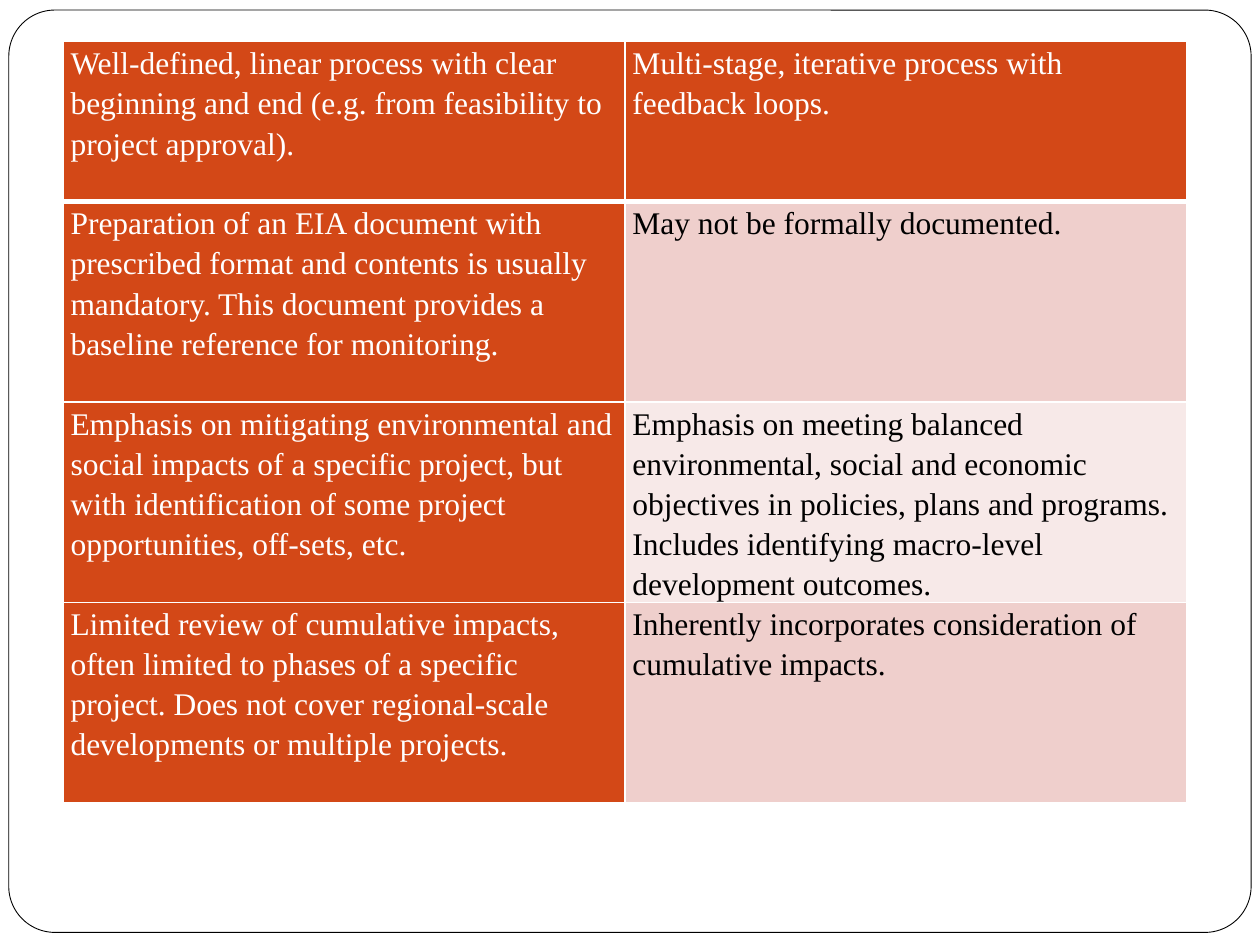
import pptx
import pptx.dml.color
import pptx.enum.shapes
import pptx.oxml
import pptx.oxml.ns
import pptx.util
from pptx.util import Inches

RGBColor = pptx.dml.color.RGBColor
WHITE = RGBColor(0xFF, 0xFF, 0xFF)
BLACK = RGBColor(0x00, 0x00, 0x00)
ORANGE = RGBColor(0xD3, 0x48, 0x17)
PINK = RGBColor(0xEF, 0xCF, 0xCC)
PALE_PINK = RGBColor(0xF7, 0xE9, 0xE8)

COMPARISON = [
    ("Well-defined, linear process with clear beginning and end "
     "(e.g. from feasibility to project approval).",
     "Multi-stage, iterative process with feedback loops."),
    ("Preparation of an EIA document with prescribed format and contents is "
     "usually mandatory. This document provides a baseline reference for monitoring.",
     "May not be formally documented."),
    ("Emphasis on mitigating environmental and social impacts of a specific "
     "project, but with identification of some project opportunities, off-sets, etc.",
     "Emphasis on meeting balanced environmental, social and economic objectives "
     "in policies, plans and programs. Includes identifying macro-level "
     "development outcomes."),
    ("Limited review of cumulative impacts, often limited to phases of a specific "
     "project. Does not cover regional-scale developments or multiple projects.",
     "Inherently incorporates consideration of cumulative impacts."),
]
ROW_HEIGHTS = [1.27, 1.59, 1.59, 1.59]


class SlideBuilder:
    font_name = "Times New Roman"
    font_size = pptx.util.Pt(18)
    line_spacing = 1.15

    def __init__(self, slide):
        self.slide = slide

    def frame(self, left, top, width, height):
        shape = self.slide.shapes.add_shape(
            pptx.enum.shapes.MSO_SHAPE.ROUNDED_RECTANGLE,
            Inches(left), Inches(top), Inches(width), Inches(height))
        shape.adjustments[0] = 0.05
        shape.shadow.inherit = False
        shape.fill.solid()
        shape.fill.fore_color.rgb = WHITE
        shape.line.color.rgb = BLACK
        shape.line.width = pptx.util.Pt(0.5)

    def table(self, left, top, column_width, row_heights, rows):
        column_count = len(rows[0])
        table = self.slide.shapes.add_table(
            len(rows), column_count, Inches(left), Inches(top),
            Inches(column_width * column_count), Inches(sum(row_heights))).table
        for column in table.columns:
            column.width = Inches(column_width)
        for row_index, texts in enumerate(rows):
            table.rows[row_index].height = Inches(row_heights[row_index])
            for column_index, text in enumerate(texts):
                if row_index == 0 or column_index == 0:
                    fill, color = ORANGE, WHITE
                else:
                    fill, color = (PINK if row_index % 2 else PALE_PINK), BLACK
                cell = table.cell(row_index, column_index)
                self.borders(cell, top=3 if row_index == 1 else 1,
                             bottom=3 if row_index == 0 else 1)
                self.cell(cell, text, fill, color)

    def cell(self, cell, text, fill, color):
        cell.fill.solid()
        cell.fill.fore_color.rgb = fill
        cell.margin_left = cell.margin_right = Inches(0.06)
        cell.margin_top = cell.margin_bottom = 0
        cell.text = text
        paragraph = cell.text_frame.paragraphs[0]
        paragraph.line_spacing = self.line_spacing
        paragraph.font.name = self.font_name
        paragraph.font.size = self.font_size
        paragraph.font.color.rgb = color

    def borders(self, cell, top, bottom):
        """Add white borders, in points; call before the cell is filled."""
        properties = cell._tc.get_or_add_tcPr()
        for side, width in (("L", 1), ("R", 1), ("T", top), ("B", bottom)):
            properties.append(pptx.oxml.parse_xml(
                f'<a:ln{side} {pptx.oxml.ns.nsdecls("a")} w="{pptx.util.Pt(width)}">'
                f'<a:solidFill><a:srgbClr val="{WHITE}"/></a:solidFill></a:ln{side}>'))


def main():
    presentation = pptx.Presentation()
    presentation.slide_width = Inches(10)
    presentation.slide_height = Inches(7.5)
    slide = presentation.slides.add_slide(presentation.slide_layouts[6])
    builder = SlideBuilder(slide)
    builder.frame(0.07, 0.08, 9.86, 7.32)
    builder.table(0.5, 0.33, 4.46, ROW_HEIGHTS, COMPARISON)
    presentation.save("out.pptx")


if __name__ == "__main__":
    main()
